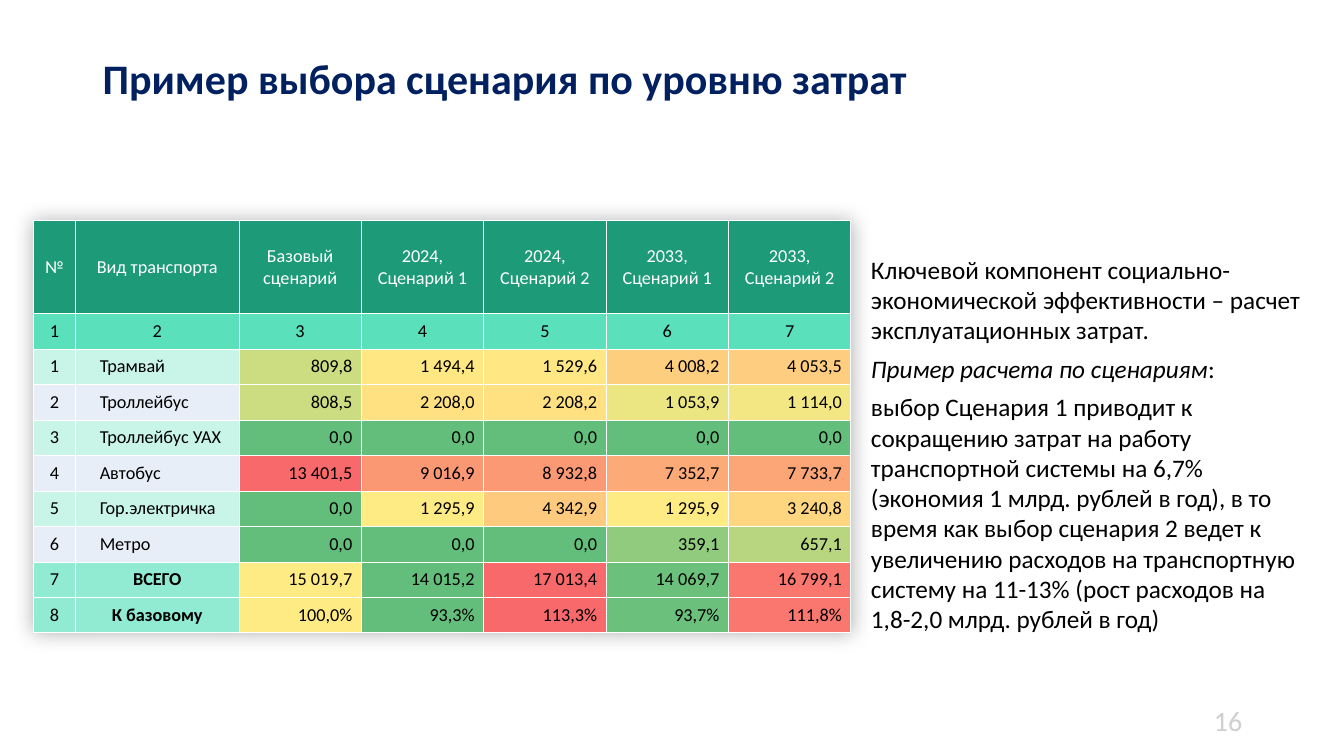
"""Build the slide that compares transport cost scenarios."""
from typing import NamedTuple

from pptx import Presentation
from pptx import util as u
from pptx.dml.color import RGBColor
from pptx.enum import text
from pptx.oxml import parse_xml
from pptx.oxml.ns import nsdecls

FONT = "Calibri"
BLACK, WHITE = "000000", "FFFFFF"
HEADER, NUMBERING, TOTAL = "1D9A78", "5AE0BB", "91EAD2"
BANDS = ["C8F5E8", "E8EEF8"]
GREEN, YELLOW, RED = "63BE7B", "FFEB84", "F8696B"
LEFT, CENTER, RIGHT = text.PP_ALIGN.LEFT, text.PP_ALIGN.CENTER, text.PP_ALIGN.RIGHT
MIDDLE, TOP = text.MSO_ANCHOR.MIDDLE, text.MSO_ANCHOR.TOP

TABLE_W, TABLE_H = 8.11, 4.09
NUMBER_W, NAME_W, HEADER_H = 0.42, 1.62, 0.92
HEADINGS = ["№", "Вид транспорта", "Базовый сценарий", "2024, Сценарий 1",
            "2024, Сценарий 2", "2033, Сценарий 1", "2033, Сценарий 2"]


class CostRow(NamedTuple):
    name: str
    values: list[str]
    fills: list[str]
    total: bool = False


class Style(NamedTuple):
    size: float
    color: str = BLACK
    bold: bool = False


class Label(NamedTuple):
    box: tuple[float, float, float, float]
    paragraphs: list[list[str]]
    style: Style
    align: text.PP_ALIGN = LEFT
    anchor: text.MSO_ANCHOR = MIDDLE
    spacing: float = 1
    after: float = 0


TOTAL_FILLS = [YELLOW, GREEN, RED, "6BC07B", "F9776E"]
ROWS = [
    CostRow("Трамвай", ["809,8", "1 494,4", "1 529,6", "4 008,2", "4 053,5"],
            ["CBDC81", "FFE884", "FFE884", "FECE7F", "FECD7F"]),
    CostRow("Троллейбус", ["808,5", "2 208,0", "2 208,2", "1 053,9", "1 114,0"],
            ["CBDC81", "FFE182", "FFE182", "EBE582", "F3E783"]),
    CostRow("Троллейбус УАХ", ["0,0"] * 5, [GREEN] * 5),
    CostRow("Автобус", ["13 401,5", "9 016,9", "8 932,8", "7 352,7", "7 733,7"],
            [RED, "FB9874", "FB9975", "FCAA78", "FCA677"]),
    CostRow("Гор.электричка", ["0,0", "1 295,9", "4 342,9", "1 295,9", "3 240,8"],
            [GREEN, YELLOW, "FECA7E", YELLOW, "FED680"]),
    CostRow("Метро", ["0,0", "0,0", "0,0", "359,1", "657,1"],
            [GREEN, GREEN, GREEN, "91CB7D", "B8D67F"]),
    CostRow("ВСЕГО", ["15 019,7", "14 015,2", "17 013,4", "14 069,7", "16 799,1"],
            TOTAL_FILLS, True),
    CostRow("К базовому", ["100,0%", "93,3%", "113,3%", "93,7%", "111,8%"],
            TOTAL_FILLS, True),
]

LABELS = [
    Label((0.92, 0.4, 11.5, 0.81), [["Пример выбора сценария по уровню затрат"]],
          Style(30, "002060", True), spacing=0.9),
    Label((9.42, 6.95, 3, 0.4), [["16"]], Style(20, "D0CECE"), RIGHT),
    Label((8.54, 2.47, 4.51, 3.9), [
        ["Ключевой компонент социально-экономической эффективности – расчет "
         "эксплуатационных затрат."],
        ["*Пример расчета по сценариям", ":"],
        ["выбор Сценария 1 приводит к сокращению затрат на работу транспортной "
         "системы на 6,7% (экономия 1 млрд. рублей в год), в то время как выбор "
         "сценария 2 ведет к увеличению расходов на транспортную систему на "
         "11-13% (рост расходов на 1,8-2,0 млрд. рублей в год)"],
    ], Style(18), anchor=TOP, after=6),
]


def rgb(color: str) -> RGBColor:
    return RGBColor.from_string(color)


def style_run(r, style: Style, italic: bool = False) -> None:
    r.font.name = FONT
    r.font.size = u.Pt(style.size)
    r.font.bold = style.bold
    r.font.italic = italic
    r.font.color.rgb = rgb(style.color)


def add_label(s, label: Label) -> None:
    tf = s.shapes.add_textbox(*map(u.Inches, label.box)).text_frame
    tf.word_wrap = True
    tf.vertical_anchor = label.anchor
    for i, pieces in enumerate(label.paragraphs):
        p = tf.add_paragraph() if i else tf.paragraphs[0]
        p.alignment = label.align
        p.line_spacing = label.spacing
        p.space_after = u.Pt(label.after)
        for piece in pieces:
            r = p.add_run()
            r.text = piece.removeprefix("*")
            style_run(r, label.style, piece.startswith("*"))


def fill_cell(cell, value: str, fill: str, align: text.PP_ALIGN = CENTER,
              color: str = BLACK, bold: bool = False) -> None:
    tcPr = cell._tc.get_or_add_tcPr()
    for side in "LRTB":
        tcPr.append(parse_xml(
            f'<a:ln{side} {nsdecls("a")} w="6350"><a:solidFill>'
            f'<a:srgbClr val="{WHITE}"/></a:solidFill></a:ln{side}>'))
    cell.fill.solid()
    cell.fill.fore_color.rgb = rgb(fill)
    cell.vertical_anchor = MIDDLE
    cell.margin_left = cell.margin_right = u.Inches(0.09)
    cell.margin_top = cell.margin_bottom = 0
    p = cell.text_frame.paragraphs[0]
    p.text = value
    p.alignment = align
    if align != CENTER:
        p._p.get_or_add_pPr().set("indent", str(u.Inches(0.15)))
    style_run(p.runs[0], Style(13, color, bold))


def add_cost_table(s) -> None:
    sp = s.shapes.add_table(len(ROWS) + 2, len(HEADINGS), u.Inches(0.33), u.Inches(2.19),
                            u.Inches(TABLE_W), u.Inches(TABLE_H))
    table = sp.table
    table.horz_banding = False
    table._tbl.tblPr.insert(0, parse_xml(
        f'<a:effectLst {nsdecls("a")}><a:outerShdw blurRad="190500" dist="0" algn="ctr" '
        'rotWithShape="0"><a:srgbClr val="000000"><a:alpha val="30000"/></a:srgbClr>'
        '</a:outerShdw></a:effectLst>'))
    scenarios = len(HEADINGS) - 2
    widths = [NUMBER_W, NAME_W] + [(TABLE_W - NUMBER_W - NAME_W) / scenarios] * scenarios
    for column, width in zip(table.columns, widths):
        column.width = u.Inches(width)
    heights = [HEADER_H] + [(TABLE_H - HEADER_H) / (len(ROWS) + 1)] * (len(ROWS) + 1)
    for row, height in zip(table.rows, heights):
        row.height = u.Inches(height)
    for c, heading in enumerate(HEADINGS):
        fill_cell(table.cell(0, c), heading, HEADER, color=WHITE)
        fill_cell(table.cell(1, c), str(c + 1), NUMBERING)
    for i, row in enumerate(ROWS):
        band = TOTAL if row.total else BANDS[i % 2]
        fill_cell(table.cell(i + 2, 0), str(i + 1), band)
        fill_cell(table.cell(i + 2, 1), row.name, band,
                  CENTER if row.total else LEFT, bold=row.total)
        for c, (value, fill) in enumerate(zip(row.values, row.fills), 2):
            fill_cell(table.cell(i + 2, c), value, fill, RIGHT)


def main() -> None:
    prs = Presentation()
    prs.slide_width, prs.slide_height = u.Inches(13.33), u.Inches(7.5)
    s = prs.slides.add_slide(prs.slide_layouts[6])
    add_cost_table(s)
    for label in LABELS:
        add_label(s, label)
    prs.save("out.pptx")


if __name__ == "__main__":
    main()
